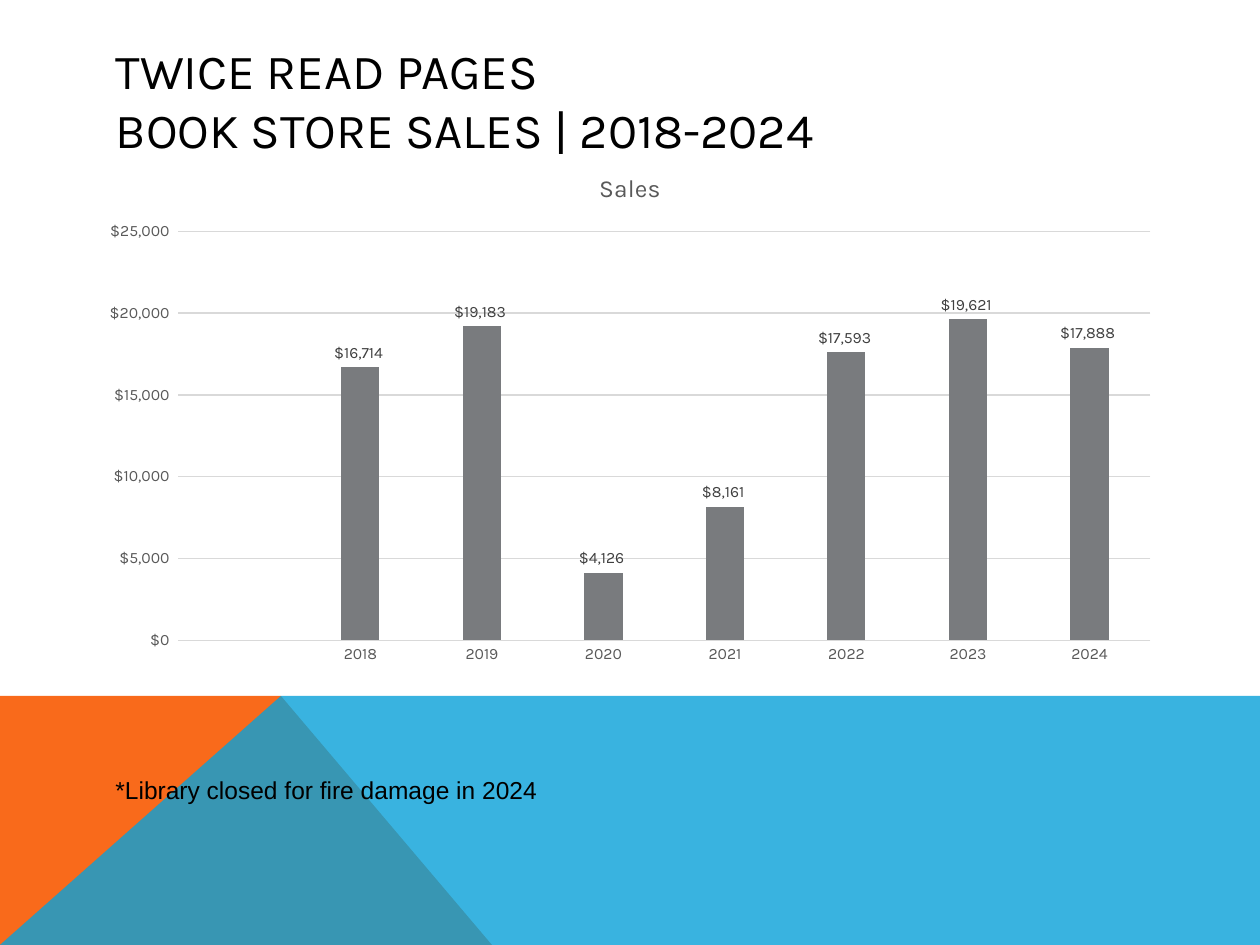
from lxml.etree import SubElement
from pptx import Presentation
from pptx.chart.data import CategoryChartData
from pptx.dml.color import RGBColor
from pptx.enum.chart import XL_CHART_TYPE, XL_LABEL_POSITION, XL_TICK_MARK
from pptx.enum.text import MSO_ANCHOR, PP_ALIGN
from pptx.oxml.ns import qn
from pptx.util import Emu, Pt

PX_PER_INCH = 126
DOLLARS = '"$"#,##0_);[Red]\\("$"#,##0\\)'
SALES = {
    "": None,
    "2018": 16714,
    "2019": 19183,
    "2020": 4126,
    "2021": 8161,
    "2022": 17593,
    "2023": 19621,
    "2024": 17888,
}


def px(length):
    """Turn pixels into EMU."""
    return Emu(round(length * 914400 / PX_PER_INCH))


def color(hex_value):
    """Turn a hex string into a colour."""
    return RGBColor.from_string(hex_value)


def set_all(target, **values):
    """Set each named attribute on the target."""
    for name, value in values.items():
        setattr(target, name, value)


def style_font(font, size, hex_value, name="Karla"):
    """Give a font its face, size and colour."""
    set_all(font, name=name, size=Pt(size), bold=False)
    font.color.rgb = color(hex_value)


def style_line(line, hex_value="D9D9D9"):
    """Give an axis or grid line its colour and width."""
    line.color.rgb = color(hex_value)
    line.width = Pt(0.75)


def add_band(slide, points, hex_value, opacity=100):
    """Draw a filled polygon of the footer."""
    builder = slide.shapes.build_freeform(*map(px, points[0]))
    builder.add_line_segments([(px(x), px(y)) for x, y in points[1:]])
    band = builder.convert_to_shape()
    band.shadow.inherit = False
    band.line.fill.background()
    band.fill.solid()
    band.fill.fore_color.rgb = color(hex_value)
    if opacity < 100:
        tint = band.fill._xPr.find(".//" + qn("a:srgbClr"))
        SubElement(tint, qn("a:alpha"), val=str(opacity * 1000))


def write_text(box, bounds, text, anchor, **font):
    """Place a text shape and write its formatted paragraph."""
    set_all(box, **dict(zip(("left", "top", "width", "height"), map(px, bounds))))
    frame = box.text_frame
    set_all(frame, word_wrap=True, vertical_anchor=anchor)
    paragraph = frame.paragraphs[0]
    paragraph.text = text
    set_all(paragraph, alignment=PP_ALIGN.LEFT, line_spacing=1.0)
    for run in paragraph.runs:
        style_font(run.font, **font)


def format_axes(chart):
    """Format the year axis and the dollar axis."""
    years, dollars = chart.category_axis, chart.value_axis
    for axis in (years, dollars):
        set_all(axis, major_tick_mark=XL_TICK_MARK.NONE, minor_tick_mark=XL_TICK_MARK.NONE)
        style_font(axis.tick_labels.font, 9, "595959")
    style_line(years.format.line)
    set_all(dollars, minimum_scale=0, maximum_scale=25000, major_unit=5000)
    dollars.format.line.fill.background()
    style_line(dollars.major_gridlines.format.line)
    set_all(dollars.tick_labels, number_format=DOLLARS, number_format_is_linked=False)


def add_sales_chart(slide, bounds):
    """Add the column chart of yearly sales."""
    sales = CategoryChartData(number_format=DOLLARS)
    sales.categories = list(SALES)
    sales.add_series("Sales", list(SALES.values()))
    chart = slide.shapes.add_chart(
        XL_CHART_TYPE.COLUMN_CLUSTERED, *map(px, bounds), sales
    ).chart
    chart.has_legend = False
    style_font(chart.font, 10, "000000")
    heading = chart.chart_title.text_frame
    heading.text = "Sales"
    style_font(heading.paragraphs[0].runs[0].font, 14, "595959")
    chart.chart_title.include_in_layout = False
    format_axes(chart)

    columns = chart.plots[0]
    set_all(columns, gap_width=219, overlap=-27, vary_by_categories=False)
    fill = columns.series[0].format.fill
    fill.solid()
    fill.fore_color.rgb = color("797B7E")
    labels = columns.series[0].data_labels
    set_all(
        labels,
        show_value=True,
        position=XL_LABEL_POSITION.OUTSIDE_END,
        number_format=DOLLARS,
        number_format_is_linked=False,
    )
    style_font(labels.font, 9, "404040")


def main():
    """Build and save the sales slide."""
    deck = Presentation()
    width, height = 1260, 945
    set_all(deck, slide_width=px(width), slide_height=px(height))
    slide = deck.slides.add_slide(deck.slide_layouts[5])

    band_top, peak = 696, 281
    add_band(slide, [(0, height), (0, band_top), (peak, band_top), (492, height)], "F96A1B")
    add_band(
        slide,
        [(0, height), (peak, band_top), (width, band_top), (width, height)],
        "08A1D9",
        opacity=80,
    )
    write_text(
        slide.shapes.title,
        (103, 34, 1053, 131),
        "TWICE READ PAGES\vBOOK STORE SALES | 2018-2024",
        MSO_ANCHOR.MIDDLE,
        size=28,
        hex_value="000000",
    )
    add_sales_chart(slide, (88, 151, 1084, 523))
    write_text(
        slide.shapes.add_textbox(0, 0, 0, 0),
        (103, 769, 901, 43),
        "*Library closed for fire damage in 2024",
        MSO_ANCHOR.TOP,
        size=14,
        hex_value="000000",
        name="Arial",
    )
    deck.save("out.pptx")


if __name__ == "__main__":
    main()
